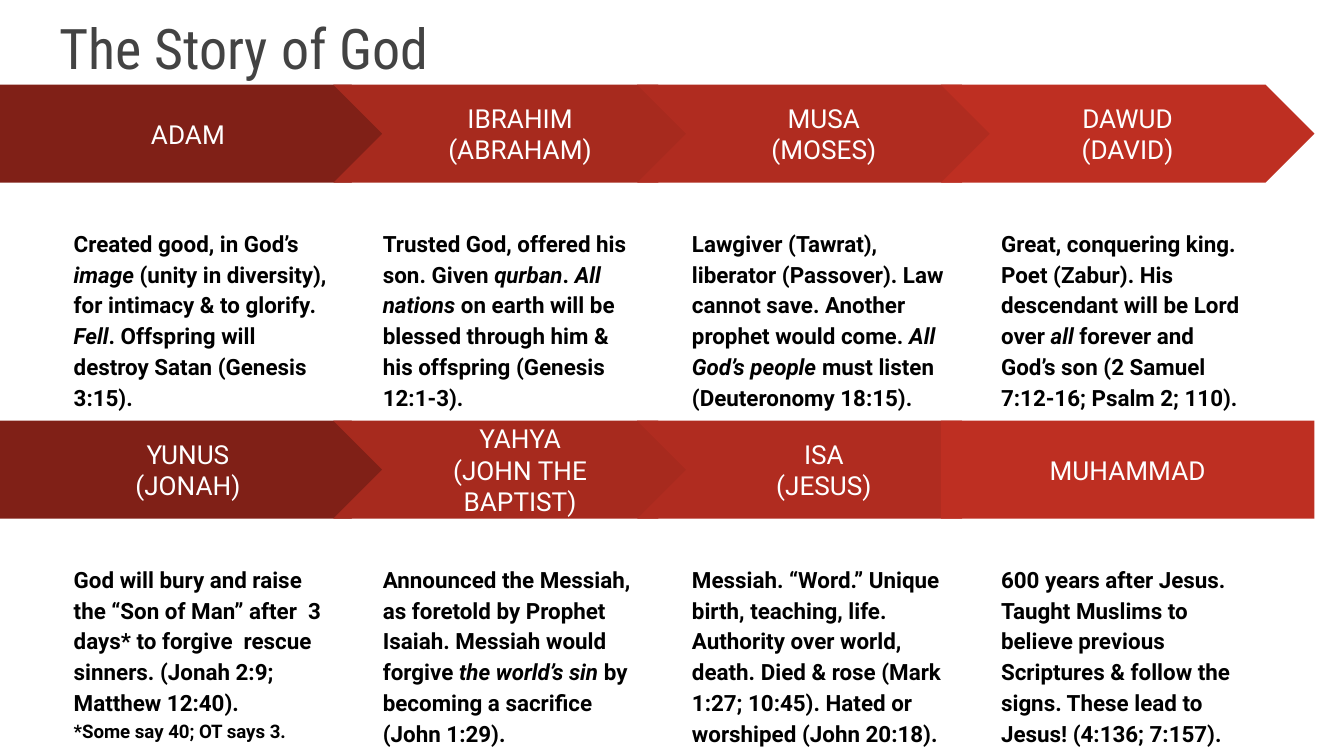
"""Build a timeline slide of eight prophets in two banded rows of four."""
from pptx import Presentation
from pptx.dml.color import RGBColor
from pptx.enum.shapes import MSO_SHAPE
from pptx.enum.text import MSO_ANCHOR, MSO_AUTO_SIZE, PP_ALIGN
from pptx.util import Inches, Pt

PENTAGON, CHEVRON, RECTANGLE = MSO_SHAPE.PENTAGON, MSO_SHAPE.CHEVRON, MSO_SHAPE.RECTANGLE
TOP, MIDDLE = MSO_ANCHOR.TOP, MSO_ANCHOR.MIDDLE
LEFT, CENTER = PP_ALIGN.LEFT, PP_ALIGN.CENTER
NO_FIT = MSO_AUTO_SIZE.NONE

BAND_TOP, BAND_HEIGHT, ROW_PITCH = 0.63, 0.73, 2.5
BAND_LEFT, BAND_PITCH, BAND_WIDTH = 0.22, 2.26, 2.78
FIRST_BAND_WIDTH = 2.98
STORY_LEFT, STORY_PITCH, STORY_WIDTH = 0.45, 2.3, 2.08
STORY_DROP, STORY_HEIGHT = 0.95, 1.55
REDS = ["802017", "A72A1E", "B02C20", "BE2F22"]

ROWS = [
    [
        (PENTAGON, "ADAM",
         "Created good, in God’s _image _(unity in diversity), for intimacy & to glorify_. Fell_"
         ". Offspring will destroy Satan (Genesis 3:15).", ""),
        (CHEVRON, "IBRAHIM\n(ABRAHAM)",
         "Trusted God, offered his son. Given _qurban_. _All nations_ on earth will be blessed "
         "through him & his offspring (Genesis 12:1-3).", ""),
        (CHEVRON, "MUSA\n(MOSES)",
         "Lawgiver (Tawrat), liberator (Passover). Law cannot save. Another prophet would come. "
         "_All God’s people_ must listen (Deuteronomy 18:15).", ""),
        (CHEVRON, "DAWUD\n(DAVID)",
         "Great, conquering king. Poet (Zabur). His descendant will be Lord over _all _forever "
         "and God’s son (2 Samuel 7:12-16; Psalm 2; 110).", ""),
    ],
    [
        (PENTAGON, "YUNUS\n(JONAH)",
         "God will bury and raise the “Son of Man” after  3 days* to forgive  rescue sinners. "
         "(Jonah 2:9; Matthew 12:40). ", "*Some say 40; OT says 3."),
        (CHEVRON, "YAHYA\n(JOHN THE BAPTIST)",
         "Announced the Messiah, as foretold by Prophet Isaiah. Messiah would forgive "
         "_the world’s sin _by becoming a sacrifice (John 1:29).", ""),
        (CHEVRON, "ISA\n(JESUS)",
         "Messiah. “Word.” Unique birth, teaching, life. Authority over world, death. "
         "Died & rose (Mark 1:27; 10:45). Hated or worshiped (John 20:18).", ""),
        (RECTANGLE, "MUHAMMAD",
         "600 years after Jesus. Taught Muslims to believe previous Scriptures & follow the "
         "signs. These lead to Jesus! (4:136; 7:157).", ""),
    ],
]


def color(target, value):
    target.rgb = RGBColor.from_string(value)


def style(frame, anchor, align, font, size, value, bold=False):
    frame.word_wrap = True
    frame.auto_size = NO_FIT
    frame.vertical_anchor = anchor
    frame.margin_left = frame.margin_right = Inches(0.1)
    frame.margin_top = frame.margin_bottom = Inches(0.1)
    for paragraph in frame.paragraphs:
        paragraph.alignment = align
        for run in paragraph.runs:
            run.font.name = font
            run.font.size = Pt(size)
            run.font.bold = bold
            color(run.font.color, value)


deck = Presentation()
deck.slide_width = Inches(10)
deck.slide_height = deck.slide_width * 9 // 16
slide = deck.slides.add_slide(deck.slide_layouts[5])

heading = slide.shapes.title
heading.left, heading.top = Inches(0.34), Inches(0)
heading.width, heading.height = Inches(9.32), Inches(0.63)
heading.text_frame.text = "The Story of God"
style(heading.text_frame, TOP, LEFT, "Roboto Condensed", 30, "434343")

for row, prophets in enumerate(ROWS):
    band_top = BAND_TOP + row * ROW_PITCH
    for column, (outline, name, story, footnote) in enumerate(prophets):
        band_left = BAND_LEFT + column * BAND_PITCH if column else 0
        band_width = BAND_WIDTH if column else FIRST_BAND_WIDTH
        band = slide.shapes.add_shape(outline, Inches(band_left), Inches(band_top),
                                      Inches(band_width), Inches(BAND_HEIGHT))
        band.shadow.inherit = False
        band.fill.solid()
        color(band.fill.fore_color, REDS[column])
        band.line.fill.background()
        band.text_frame.text = name
        style(band.text_frame, MIDDLE, CENTER, "Roboto", 14, "FFFFFF")

        account = slide.shapes.add_textbox(
            Inches(STORY_LEFT + column * STORY_PITCH), Inches(band_top + STORY_DROP),
            Inches(STORY_WIDTH), Inches(STORY_HEIGHT)).text_frame
        summary = account.paragraphs[0]
        summary.line_spacing = 1.15
        for index, phrase in enumerate(story.split("_")):
            run = summary.add_run()
            run.text = phrase
            run.font.italic = index % 2 == 1
        if footnote:
            summary.add_line_break()
            summary.add_run().text = footnote
        style(account, TOP, LEFT, "Roboto", 12, "000000", bold=True)
        if footnote:
            summary.runs[-1].font.size = Pt(10)

deck.save("out.pptx")
